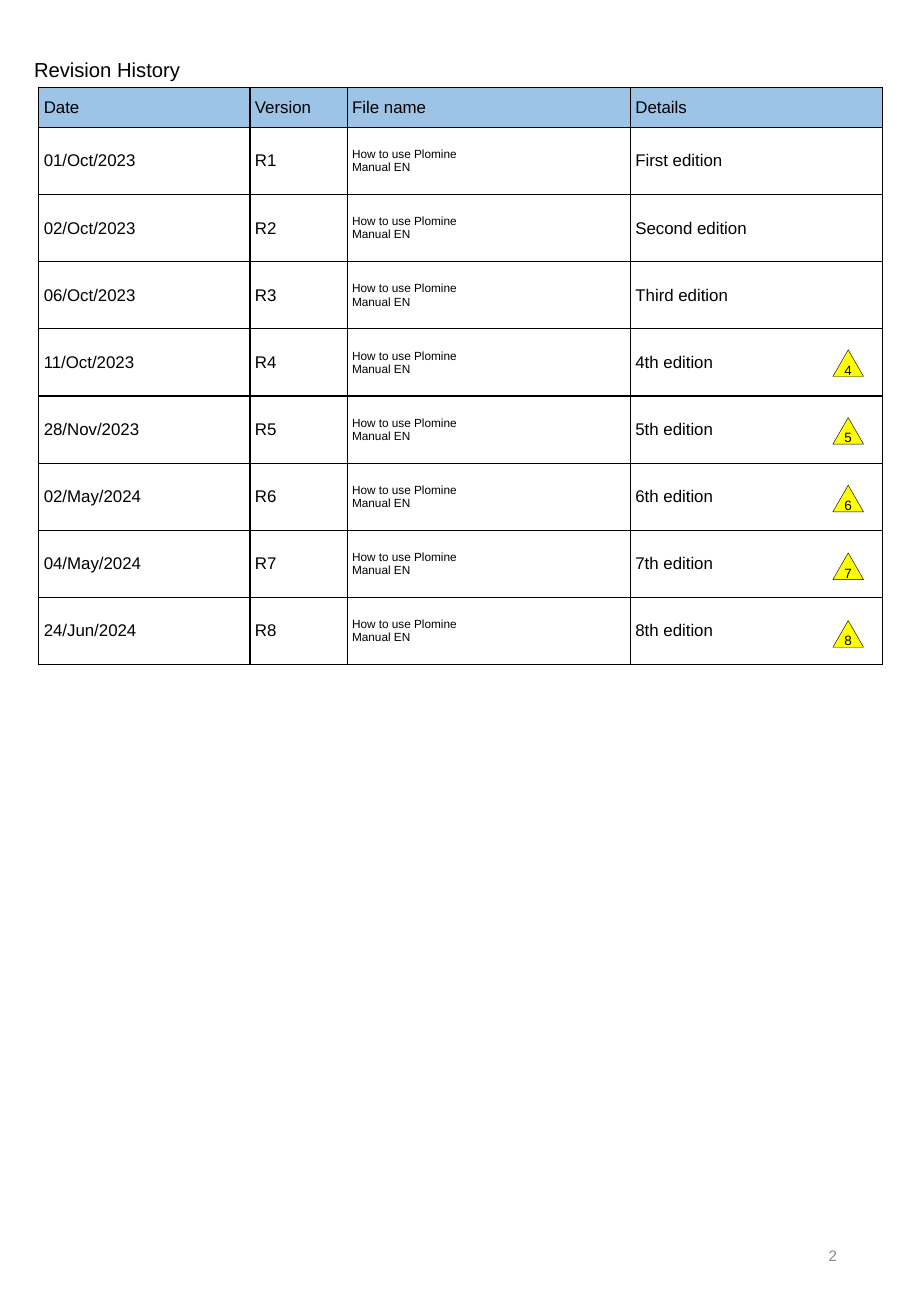
from lxml import etree
from pptx import Presentation
from pptx.dml.color import RGBColor
from pptx.enum import shapes, text
from pptx.oxml import ns
from pptx.util import Pt

FONT = "Arial"
COLORS = {"ink": "000000", "header": "9DC3E6", "marker": "FFFF00", "page_number": "8C8C8C"}
COLUMN_WIDTHS = [125.2, 57.6, 167.9, 149.7]
HEADER_HEIGHT, ROW_HEIGHT = 23.8, 39.78
HEADINGS = ["Date", "Version", "File name", "Details"]
FILE_NAME = ["How to use Plomine", "Manual EN"]
REVISIONS = [
    ("01/Oct/2023", "First"),
    ("02/Oct/2023", "Second"),
    ("06/Oct/2023", "Third"),
    ("11/Oct/2023", "4th"),
    ("28/Nov/2023", "5th"),
    ("02/May/2024", "6th"),
    ("04/May/2024", "7th"),
    ("24/Jun/2024", "8th"),
]
FIRST_MARKED = 4


def color(name):
    return RGBColor.from_string(COLORS[name])


def write(frame, lines, size, ink="ink", align=text.PP_ALIGN.LEFT):
    """Fill a text frame with one paragraph per line."""
    for index, line in enumerate(lines):
        para = frame.paragraphs[0] if index == 0 else frame.add_paragraph()
        para.alignment = align
        span = para.add_run()
        span.text = line
        span.font.name = FONT
        span.font.size = Pt(size)
        span.font.color.rgb = color(ink)


def place(item, left, top, width, height):
    item.left, item.top, item.width, item.height = map(Pt, (left, top, width, height))


def add_title(page):
    title = page.shapes.title
    place(title, 8.64, 30.2, 116, 21.6)
    frame = title.text_frame
    frame.word_wrap = False
    frame.auto_size = text.MSO_AUTO_SIZE.NONE
    frame.vertical_anchor = text.MSO_ANCHOR.MIDDLE
    frame.margin_left = Pt(11.5)
    write(frame, ["Revision History"], 12)


def add_borders(cell):
    properties = cell._tc.get_or_add_tcPr()
    for side in ("a:lnL", "a:lnR", "a:lnT", "a:lnB"):
        line = etree.SubElement(properties, ns.qn(side), w=str(Pt(0.75)))
        fill = etree.SubElement(line, ns.qn("a:solidFill"))
        etree.SubElement(fill, ns.qn("a:srgbClr"), val=COLORS["ink"])


def fill_cell(cell, lines, size, is_header):
    add_borders(cell)
    cell.vertical_anchor = text.MSO_ANCHOR.MIDDLE
    cell.margin_left, cell.margin_right = Pt(3), Pt(7.2)
    cell.margin_top = cell.margin_bottom = Pt(3.6)
    if is_header:
        cell.fill.solid()
        cell.fill.fore_color.rgb = color("header")
    else:
        cell.fill.background()
    write(cell.text_frame, lines, size)


def add_history(page):
    rows = [[[heading] for heading in HEADINGS]]
    for number, (date, edition) in enumerate(REVISIONS, 1):
        rows.append([[date], [f"R{number}"], FILE_NAME, [f"{edition} edition"]])
    height = HEADER_HEIGHT + ROW_HEIGHT * len(REVISIONS)
    table = page.shapes.add_table(
        len(rows), len(HEADINGS), Pt(23), Pt(51.8), Pt(sum(COLUMN_WIDTHS)), Pt(height)
    ).table
    table.first_row = table.horz_banding = False
    for column, width in zip(table.columns, COLUMN_WIDTHS):
        column.width = Pt(width)
    for index, row in enumerate(rows):
        table.rows[index].height = Pt(ROW_HEIGHT if index else HEADER_HEIGHT)
        for position, lines in enumerate(row):
            size = 7 if lines is FILE_NAME else 10
            fill_cell(table.cell(index, position), lines, size, index == 0)


def add_marker(page, number):
    """Add the numbered triangle of one revision."""
    top = 207.3 + 40.1 * (number - FIRST_MARKED)
    marker = page.shapes.add_shape(
        shapes.MSO_SHAPE.ISOSCELES_TRIANGLE, Pt(493.7), Pt(top), Pt(18.2), Pt(15.8)
    )
    marker.shadow.inherit = False
    marker.fill.solid()
    marker.fill.fore_color.rgb = color("marker")
    marker.line.color.rgb = color("ink")
    marker.line.width = Pt(0.25)
    frame = marker.text_frame
    frame.word_wrap = False
    frame.vertical_anchor = text.MSO_ANCHOR.MIDDLE
    frame.margin_left = frame.margin_right = frame.margin_top = frame.margin_bottom = 0
    write(frame, [str(number)], 8, align=text.PP_ALIGN.CENTER)


def add_page_number(page):
    box = page.shapes.add_textbox(Pt(381.6), Pt(722.9), Pt(121.7), Pt(41.8))
    frame = box.text_frame
    frame.word_wrap = True
    frame.vertical_anchor = text.MSO_ANCHOR.MIDDLE
    write(frame, ["2"], 9, "page_number", text.PP_ALIGN.RIGHT)


def main():
    deck = Presentation()
    deck.slide_width, deck.slide_height = Pt(540), Pt(779.76)
    page = deck.slides.add_slide(deck.slide_layouts.get_by_name("Title Only"))
    add_title(page)
    add_history(page)
    add_page_number(page)
    for number in range(FIRST_MARKED, len(REVISIONS) + 1):
        add_marker(page, number)
    deck.save("out.pptx")


if __name__ == "__main__":
    main()
